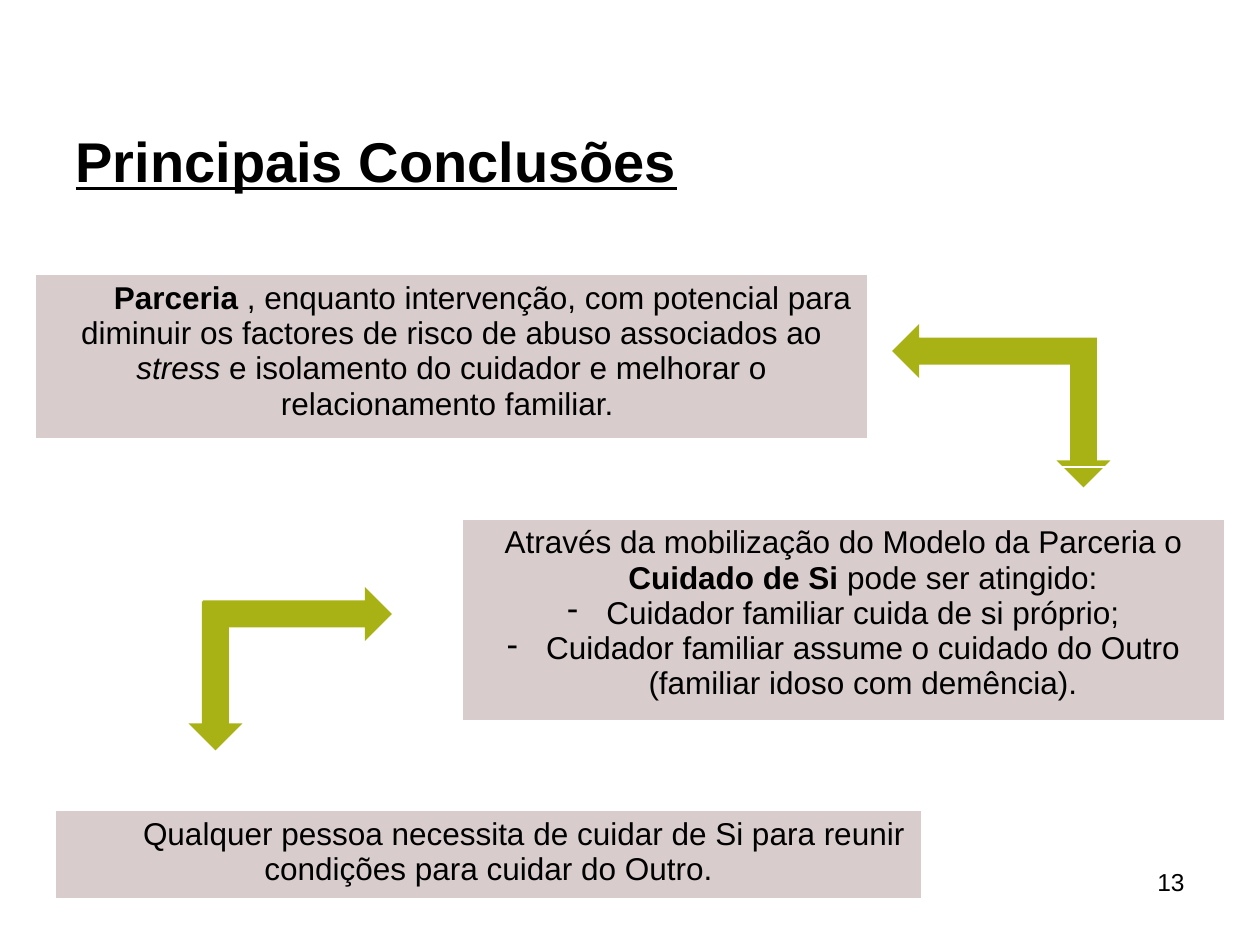
from dataclasses import dataclass

from lxml import etree
from pptx import Presentation
from pptx.dml.color import RGBColor
from pptx.enum.shapes import MSO_SHAPE
from pptx.enum.text import MSO_ANCHOR, PP_ALIGN
from pptx.oxml.ns import qn
from pptx.util import Pt

PX = 914400 // 126
BLACK = RGBColor(0x00, 0x00, 0x00)
WHITE = RGBColor(0xFF, 0xFF, 0xFF)
PANEL = RGBColor(0xD8, 0xCC, 0xCC)
OLIVE = RGBColor(0xA8, 0xB2, 0x14)
FONT = "Arial"
LEFT, CENTER, RIGHT = PP_ALIGN.LEFT, PP_ALIGN.CENTER, PP_ALIGN.RIGHT
TOP = MSO_ANCHOR.TOP
RIGHT_ARROW = MSO_SHAPE.RIGHT_ARROW
ARROW_HEIGHT = 54


@dataclass(frozen=True)
class Span:
    text: str
    bold: bool = False
    italic: bool = False


@dataclass(frozen=True)
class Line:
    spans: tuple[Span, ...]
    margin: int
    indent: int
    bullet: str = ""


@dataclass(frozen=True)
class Conclusion:
    left: int
    top: int
    width: int
    header_height: int
    body_height: int
    lines: tuple[Line, ...]


@dataclass(frozen=True)
class Arrow:
    left: int
    top: int
    length: int
    rotation: int = 0


CONCLUSIONS = (
    Conclusion(35, 224, 833, 48, 153, (
        Line((
            Span("Parceria ", bold=True),
            Span(", enquanto intervenção, com potencial para diminuir os "
                 "factores de risco de abuso associados ao "),
            Span("stress", italic=True),
            Span(" e isolamento do cuidador e melhorar o relacionamento familiar. "),
        ), 0, 62),
    )),
    Conclusion(462, 467, 763, 52, 188, (
        Line((
            Span("Através da mobilização do Modelo da Parceria o "),
            Span("Cuidado de Si ", bold=True),
            Span("pode ser atingido:"),
        ), 39, -39),
        Line((Span("Cuidador familiar cuida de si próprio;"),), 39, -39, "-"),
        Line((Span("Cuidador familiar assume o cuidado do Outro "
                   "(familiar idoso com demência)."),), 39, -39, "-"),
    )),
    Conclusion(55, 760, 867, 48, 88, (
        Line((Span(" Qualquer pessoa necessita de cuidar de Si para reunir "
                   "condições para cuidar do Outro."),), 0, 62),
    )),
)

ARROWS = (
    Arrow(1009, 386, 149, 90),
    Arrow(892, 324, 205, 180),
    Arrow(203, 587, 189),
    Arrow(141, 649, 149, 90),
)


def format_paragraph(paragraph, size: int, alignment) -> None:
    paragraph.alignment = alignment
    paragraph.font.name = FONT
    paragraph.font.size = Pt(size)
    paragraph.font.color.rgb = BLACK


def add_title(slide, text: str) -> None:
    title = slide.shapes.title
    title.left, title.top, title.width, title.height = (
        v * PX for v in (63, 120, 1134, 723))
    frame = title.text_frame
    frame.text = text
    frame.vertical_anchor = TOP
    paragraph = frame.paragraphs[0]
    format_paragraph(paragraph, 32, LEFT)
    paragraph.font.bold = True
    paragraph.font.underline = True


def add_page_number(slide, number: str) -> None:
    box = slide.shapes.add_textbox(*(v * PX for v in (903, 861, 294, 65)))
    box.text_frame.word_wrap = True
    box.text_frame.text = number
    format_paragraph(box.text_frame.paragraphs[0], 14, RIGHT)


def write_line(paragraph, line: Line) -> None:
    properties = paragraph._p.get_or_add_pPr()
    properties.set("marL", str(line.margin * PX))
    properties.set("indent", str(line.indent * PX))
    if line.bullet:
        etree.SubElement(properties, qn("a:buChar"), char=line.bullet)
    else:
        etree.SubElement(properties, qn("a:buNone"))
    format_paragraph(paragraph, 18, CENTER)
    for span in line.spans:
        run = paragraph.add_run()
        run.text = span.text
        if span.bold:
            run.font.bold = True
        if span.italic:
            run.font.italic = True


def add_cell_borders(cell) -> None:
    """Draw the left, right and bottom edges; call before setting the fill."""
    properties = cell._tc.get_or_add_tcPr()
    for edge in ("a:lnL", "a:lnR", "a:lnB"):
        border = etree.SubElement(properties, qn(edge), w=str(Pt(1)))
        fill = etree.SubElement(border, qn("a:solidFill"))
        etree.SubElement(fill, qn("a:srgbClr"), val=str(WHITE))


def add_conclusion(slide, item: Conclusion) -> None:
    heights = (item.header_height, item.body_height)
    table = slide.shapes.add_table(
        2, 1, item.left * PX, item.top * PX,
        item.width * PX, sum(heights) * PX).table
    table.first_row = False
    table.horz_banding = False
    for row, height in zip(table.rows, heights):
        row.height = height * PX
    table.cell(0, 0).fill.background()
    body = table.cell(1, 0)
    add_cell_borders(body)
    body.fill.solid()
    body.fill.fore_color.rgb = PANEL
    frame = body.text_frame
    for index, line in enumerate(item.lines):
        write_line(frame.add_paragraph() if index else frame.paragraphs[0], line)


def add_arrow(slide, arrow: Arrow) -> None:
    shape = slide.shapes.add_shape(
        RIGHT_ARROW, arrow.left * PX, arrow.top * PX,
        arrow.length * PX, ARROW_HEIGHT * PX)
    shape.rotation = arrow.rotation
    shape.shadow.inherit = False
    shape.fill.solid()
    shape.fill.fore_color.rgb = OLIVE
    shape.line.fill.background()


def main() -> None:
    presentation = Presentation()
    presentation.slide_width = 1260 * PX
    presentation.slide_height = 945 * PX
    slide = presentation.slides.add_slide(presentation.slide_layouts[5])
    add_page_number(slide, "13")
    add_title(slide, "Principais Conclusões")
    first, *others = CONCLUSIONS
    add_conclusion(slide, first)
    for arrow in ARROWS:
        add_arrow(slide, arrow)
    for conclusion in others:
        add_conclusion(slide, conclusion)
    presentation.save("out.pptx")


if __name__ == "__main__":
    main()
